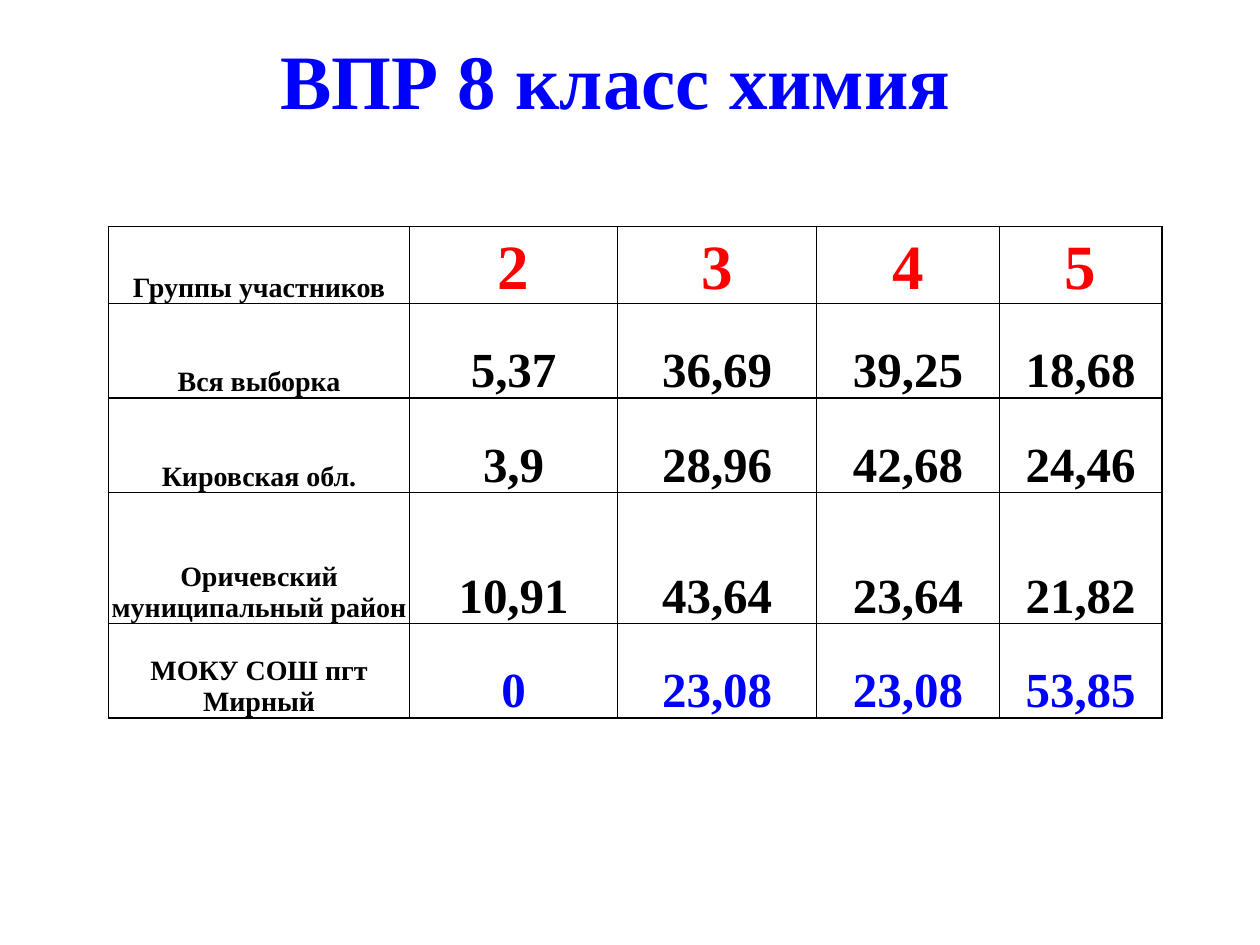
from pptx import Presentation
from pptx.dml.color import RGBColor
from pptx.enum.text import MSO_ANCHOR as Anchor, PP_ALIGN as Align
from pptx.oxml import parse_xml
from pptx.oxml.ns import nsdecls
from pptx.util import Pt

BLACK = RGBColor(0x00, 0x00, 0x00)
BLUE = RGBColor(0x00, 0x00, 0xFF)
RED = RGBColor(0xFF, 0x00, 0x00)

TITLE = "ВПР 8 класс химия"
COLUMNS = [172.1, 118.8, 113.8, 104.4, 92.9]
ROWS = [
    (42.5, 36, RED, ["Группы участников", "2", "3", "4", "5"]),
    (54, 28, BLACK, ["Вся выборка", "5,37", "36,69", "39,25", "18,68"]),
    (54, 28, BLACK, ["Кировская обл.", "3,9", "28,96", "42,68", "24,46"]),
    (74.9, 28, BLACK, ["Оричевский муниципальный район", "10,91", "43,64", "23,64", "21,82"]),
    (54, 28, BLUE, ["МОКУ СОШ пгт Мирный", "0", "23,08", "23,08", "53,85"]),
]


def write(tf, text, size=16, color=BLACK, font="Times New Roman", bold=True, align=Align.CENTER):
    p = tf.paragraphs[0]
    p.alignment = align
    r = p.add_run()
    r.text = text
    r.font.name = font
    r.font.size = Pt(size)
    r.font.bold = bold
    r.font.color.rgb = color


class Deck:
    """Draws titles and ruled tables on the current slide in one style."""

    def __init__(self, slide, border=BLACK, border_width=1):
        self.slide = slide
        self.border = border
        self.border_width = border_width

    def title(self, text, left, top, width, height):
        tf = self.slide.shapes.add_textbox(Pt(left), Pt(top), Pt(width), Pt(height)).text_frame
        tf.word_wrap = True
        tf.vertical_anchor = Anchor.MIDDLE
        write(tf, text, size=44, color=BLUE)

    def table(self, left, top, columns, rows):
        width, height = sum(columns), sum(row[0] for row in rows)
        table = self.slide.shapes.add_table(
            len(rows), len(columns), Pt(left), Pt(top), Pt(width), Pt(height)).table
        table.first_row = table.horz_banding = False
        for column, w in zip(table.columns, columns):
            column.width = Pt(w)
        for i, (h, size, color, texts) in enumerate(rows):
            table.rows[i].height = Pt(h)
            for j, text in enumerate(texts):
                cell = table.cell(i, j)
                self.frame(cell)
                if j == 0:
                    write(cell.text_frame, text)
                else:
                    write(cell.text_frame, text, size=size, color=color)

    def frame(self, cell):
        cell.vertical_anchor = Anchor.BOTTOM
        cell.margin_left = cell.margin_right = cell.margin_top = Pt(0.75)
        cell.margin_bottom = 0
        tc_pr = cell._tc.get_or_add_tcPr()
        for side in "LRTB":
            tc_pr.append(parse_xml(
                f'<a:ln{side} {nsdecls("a")} w="{Pt(self.border_width)}"><a:solidFill>'
                f'<a:srgbClr val="{self.border}"/></a:solidFill></a:ln{side}>'))
        cell.fill.background()


def main():
    prs = Presentation()
    prs.slide_width, prs.slide_height = Pt(720), Pt(540)
    deck = Deck(prs.slides.add_slide(prs.slide_layouts[6]))
    deck.title(TITLE, 28, 0, 648, 90)
    deck.table(62, 129.5, COLUMNS, ROWS)
    prs.save("out.pptx")


if __name__ == "__main__":
    main()
